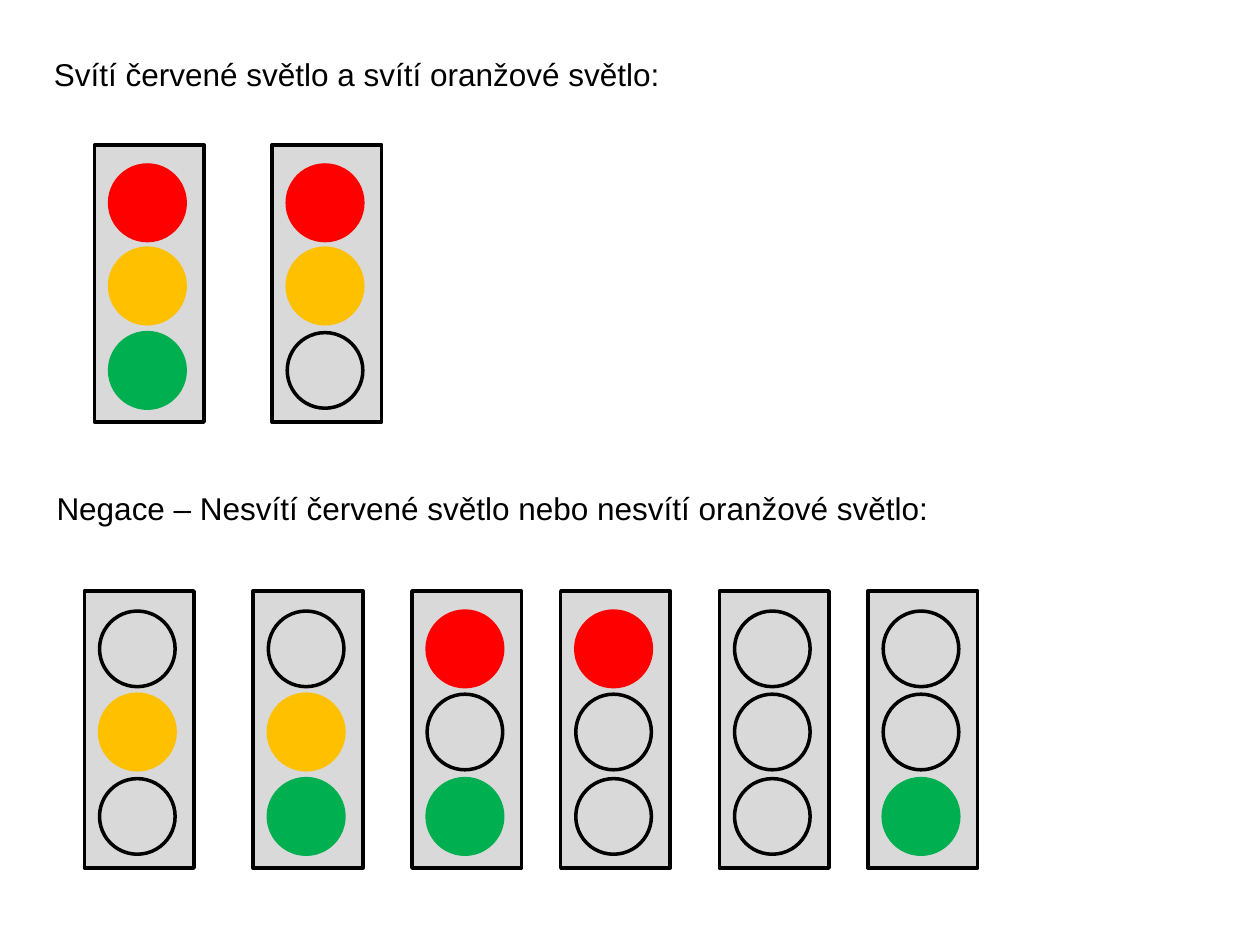
from pptx import Presentation
from pptx.dml.color import RGBColor
from pptx.enum.shapes import MSO_SHAPE as SHAPE
from pptx.enum.text import MSO_AUTO_SIZE as AUTO_SIZE
from pptx.util import Inches, Pt

COLORS = {
    "black": "000000",
    "housing": "D9D9D9",
    "red": "FF0000",
    "orange": "FFC000",
    "green": "00B050",
}
LAMPS = [("red", 0.16), ("orange", 0.82), ("green", 1.49)]
LAMP_INSET = 0.12
LAMP_SIZE = 0.6
HOUSING_SIZE = (0.87, 2.2)

STATEMENTS = [
    (0.33, 0.39, 5.05, "Svítí červené světlo a svítí oranžové světlo:"),
    (0.35, 3.83, 7.19, "Negace – Nesvítí červené světlo nebo nesvítí oranžové světlo:"),
]
SIGNAL_ROWS = [
    (1.15, [
        (0.75, {"red", "orange", "green"}),
        (2.16, {"red", "orange"}),
    ]),
    (4.69, [
        (0.67, {"orange"}),
        (2.01, {"orange", "green"}),
        (3.27, {"red", "green"}),
        (4.45, {"red"}),
        (5.71, set()),
        (6.89, {"green"}),
    ]),
]


def rgb(name):
    return RGBColor.from_string(COLORS[name])


def add_outlined(group, kind, left, top, width, height, fill, line):
    shape = group.shapes.add_shape(
        kind, Inches(left), Inches(top), Inches(width), Inches(height))
    shape.shadow.inherit = False
    if fill:
        shape.fill.solid()
        shape.fill.fore_color.rgb = rgb(fill)
    else:
        shape.fill.background()
    shape.line.color.rgb = rgb(line)
    shape.line.width = Pt(2)


def add_signal(page, left, top, lit):
    group = page.shapes.add_group_shape()
    add_outlined(group, SHAPE.RECTANGLE, left, top, *HOUSING_SIZE, "housing", "black")
    for color, offset in LAMPS:
        fill = color if color in lit else None
        add_outlined(group, SHAPE.OVAL, left + LAMP_INSET, top + offset,
                     LAMP_SIZE, LAMP_SIZE, fill, fill or "black")


def add_statement(page, left, top, width, text):
    box = page.shapes.add_textbox(
        Inches(left), Inches(top), Inches(width), Inches(0.4))
    frame = box.text_frame
    frame.word_wrap = False
    frame.auto_size = AUTO_SIZE.SHAPE_TO_FIT_TEXT
    span = frame.paragraphs[0].add_run()
    span.text = text
    for name, value in {"name": "Arial", "size": Pt(18)}.items():
        setattr(span.font, name, value)
    span.font.color.rgb = rgb("black")


def main():
    deck = Presentation()
    deck.slide_width = Inches(10)
    deck.slide_height = Inches(7.5)
    page = deck.slides.add_slide(deck.slide_layouts[6])
    for top, signals in SIGNAL_ROWS:
        for left, lit in signals:
            add_signal(page, left, top, lit)
    for statement in STATEMENTS:
        add_statement(page, *statement)
    deck.save("out.pptx")


if __name__ == "__main__":
    main()
